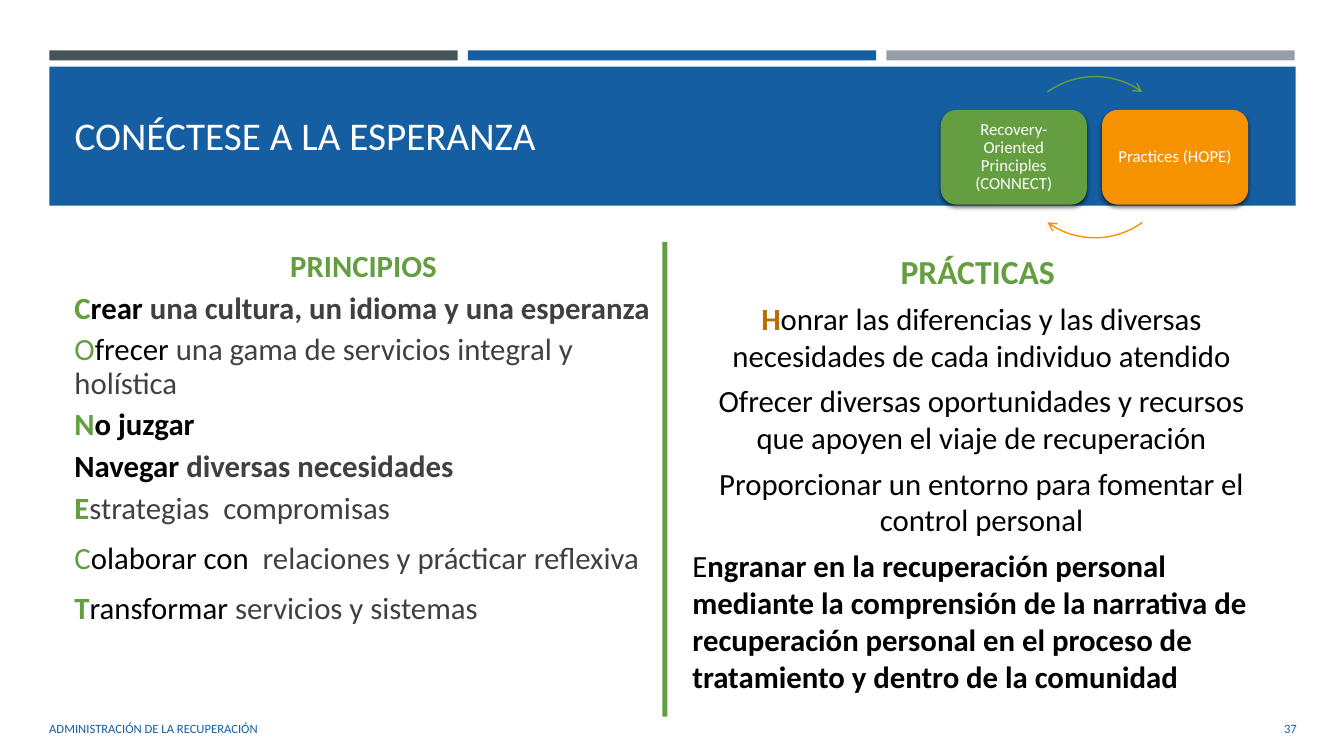
from lxml import etree
from pptx import Presentation
from pptx.dml.color import RGBColor
from pptx.enum import shapes, text
from pptx.oxml import parse_xml
from pptx.oxml.ns import nsdecls, qn
from pptx.util import Inches, Pt

BLUE = RGBColor(0x15, 0x5E, 0xA1)
SLATE = RGBColor(0x46, 0x53, 0x59)
SILVER = RGBColor(0x96, 0x9F, 0xA7)
GREEN = RGBColor(0x64, 0x9E, 0x40)
ORANGE = RGBColor(0xF6, 0x92, 0x00)
BROWN = RGBColor(0xB8, 0x6E, 0x00)
GREY = RGBColor(0x40, 0x40, 0x40)
BLACK = RGBColor(0, 0, 0)
WHITE = RGBColor(0xFF, 0xFF, 0xFF)
LEFT, CENTER, RIGHT = text.PP_ALIGN.LEFT, text.PP_ALIGN.CENTER, text.PP_ALIGN.RIGHT
KIND = shapes.MSO_SHAPE

deck = Presentation()
deck.slide_width, deck.slide_height = Inches(13.33), Inches(7.5)
slide = deck.slides.add_slide(deck.slide_layouts[5])


def write(frame, runs, size=22, align=LEFT, line=1, after=0):
    """Add one paragraph made of (words, colour, bold) runs."""
    para = frame.paragraphs[0]
    if para.runs:
        para = frame.add_paragraph()
    para.alignment, para.line_spacing = align, line
    para.space_before, para.space_after = Pt(0), Pt(after)
    for words, color, bold in runs:
        run = para.add_run()
        run.text = words
        run.font.name, run.font.size, run.font.bold = "Calibri", Pt(size), bold
        run.font.color.rgb = color


def draw(kind, box, fill=None):
    shape = slide.shapes.add_shape(kind, *map(Inches, box))
    shape.shadow.inherit = False
    shape.line.fill.background()
    if fill is None:
        shape.fill.background()
    else:
        shape.fill.solid()
        shape.fill.fore_color.rgb = fill
    return shape


# Header bars and title
for col, color in enumerate((SLATE, BLUE, SILVER)):
    draw(KIND.RECTANGLE, (0.49 + 4.15 * col, 0.5, 4.05, 0.1), color)
draw(KIND.RECTANGLE, (0.49, 0.66, 12.36, 1.38), BLUE)

title = slide.shapes.title
title.left, title.top = Inches(0.64), Inches(1.01)
title.width, title.height = Inches(12.06), Inches(1.08)
title.element.getparent().append(title.element)
frame = title.text_frame
frame.vertical_anchor = text.MSO_ANCHOR.MIDDLE
frame.margin_bottom = Inches(0.47)
write(frame, [("CONÉCTESE A LA ESPERANZA", WHITE, False)], size=28)

# Column divider
draw(KIND.RECTANGLE, (6.57, 2.4, 0.05, 4.71), GREEN)

# Cycle of two cards
cards = (
    (9.33, "Recovery-Oriented Principles (CONNECT)", GREEN, 234),
    (10.93, "Practices (HOPE)", ORANGE, 54),
)
for left, label, color, start in cards:
    card = draw(KIND.ROUNDED_RECTANGLE, (left, 1.09, 1.45, 0.94), color)
    effect = card.element.spPr.find(qn("a:effectLst"))
    effect.append(parse_xml(
        f'<a:outerShdw {nsdecls("a")} blurRad="38100" dist="25400" dir="5400000" rotWithShape="0">'
        '<a:srgbClr val="000000"><a:alpha val="55000"/></a:srgbClr></a:outerShdw>'))
    frame = card.text_frame
    frame.word_wrap = True
    frame.vertical_anchor = text.MSO_ANCHOR.MIDDLE
    write(frame, [(label, WHITE, False)], size=12, align=CENTER, line=0.9)

    arc = draw(KIND.ARC, (10.06, 0.76, 1.6, 1.6))
    arc.adjustments[0], arc.adjustments[1] = start * 0.6, (start + 72) * 0.6
    arc.line.color.rgb, arc.line.width = color, Pt(1)
    etree.SubElement(arc.line._get_or_add_ln(), qn("a:tailEnd"), type="arrow")

# Text columns and footer: box, anchor, paragraphs of (runs, format)
TOP, MID = text.MSO_ANCHOR.TOP, text.MSO_ANCHOR.MIDDLE
tight = dict(line=0.9, after=6)
loose = dict(line=0.9, after=12)
wide = dict(align=CENTER, after=6)
blocks = (
    ((0.64, 2.44, 5.93, 4.4), TOP, (
        ([("PRINCIPIOS", GREEN, True)], dict(tight, align=CENTER)),
        ([("C", GREEN, True), ("rear", BLACK, True),
          (" una cultura, un idioma y una esperanza", GREY, True)], tight),
        ([("O", GREEN, False), ("frecer ", BLACK, False),
          ("una gama de servicios integral y holística", GREY, False)], tight),
        ([("N", GREEN, True), ("o juzgar", BLACK, True)], tight),
        ([("Navegar ", BLACK, True), ("diversas necesidades", GREY, True)], tight),
        ([("E", GREEN, True), ("strategias  compromisas", GREY, False)], loose),
        ([("C", GREEN, False), ("olaborar con  ", BLACK, False),
          ("relaciones y prácticar reflexiva", GREY, False)], loose),
        ([("T", GREEN, True), ("ransformar ", BLACK, False),
          ("servicios y sistemas", GREY, False)], loose),
    )),
    ((6.77, 2.44, 5.93, 4.4), TOP, (
        ([("PRÁCTICAS ", GREEN, True)], dict(wide, size=24)),
        ([("H", BROWN, True),
          ("onrar las diferencias y las diversas necesidades de cada individuo atendido",
           BLACK, False)], wide),
        ([("Ofrecer diversas oportunidades y recursos que apoyen el viaje de recuperación",
           BLACK, False)], wide),
        ([("Proporcionar un entorno para fomentar el control personal", BLACK, False)], wide),
        ([("E", BLACK, False),
          ("ngranar en la recuperación personal mediante la comprensión de la narrativa de "
           "recuperación personal en el proceso de tratamiento y dentro de la comunidad",
           BLACK, True)], dict(after=6)),
    )),
    ((0.39, 7.03, 7.46, 0.4), MID, (
        ([("ADMINISTRACIÓN DE LA RECUPERACIÓN", BLUE, False)], dict(size=9)),
    )),
    ((11.81, 7.03, 1.15, 0.4), MID, (
        ([("37", BLUE, False)], dict(size=9, align=RIGHT)),
    )),
)
for box, anchor, paras in blocks:
    frame = slide.shapes.add_textbox(*map(Inches, box)).text_frame
    frame.word_wrap = True
    frame.vertical_anchor = anchor
    for runs, style in paras:
        write(frame, runs, **style)

deck.save("out.pptx")
